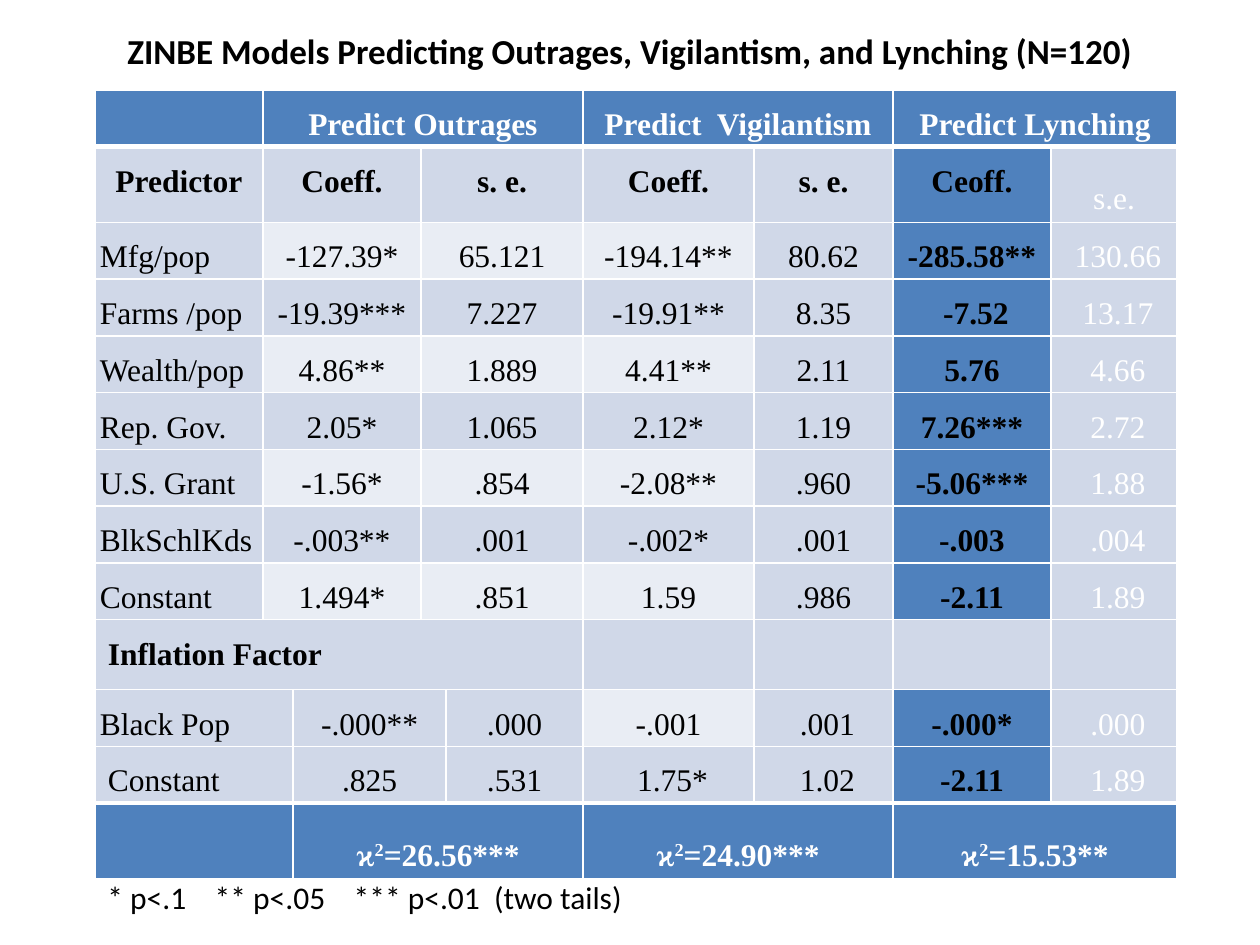
from pptx import Presentation
from pptx import util as u
from pptx.dml.color import RGBColor
from pptx.enum import text
from pptx.oxml import parse_xml
from pptx.oxml.ns import nsdecls

PX = 914400 // 126
BLUE = RGBColor(0x4F, 0x81, 0xBD)
BAND = RGBColor(0xD0, 0xD8, 0xE8)
PALE = RGBColor(0xE9, 0xED, 0xF4)
WHITE = RGBColor(255, 255, 255)
BLACK = RGBColor(0, 0, 0)


def add_run(paragraph, words, color, **format_values):
    run = paragraph.add_run()
    run.text = words
    run.font.color.rgb = color
    for name, value in format_values.items():
        setattr(run.font, name, value)
    return run


def set_borders(cell, top, bottom):
    properties = cell._tc.get_or_add_tcPr()
    for side, points in (("L", 1), ("R", 1), ("T", top), ("B", bottom)):
        properties.append(parse_xml(
            f'<a:ln{side} {nsdecls("a")} w="{u.Pt(points)}"><a:solidFill>'
            f'<a:srgbClr val="{WHITE}"/></a:solidFill></a:ln{side}>'))


presentation = Presentation()
presentation.slide_width = 1260 * PX
presentation.slide_height = 945 * PX
slide = presentation.slides.add_slide(presentation.slide_layouts[6])

captions = [
    ("ZINBE Models Predicting Outrages, Vigilantism, and Lynching (N=120)",
     (63, 22, 1134, 57), True, 20, True, text.PP_ALIGN.CENTER),
    ("* p<.1    ** p<.05    *** p<.01  (two tails)",
     (95, 872, 547, 50), False, 18, False, text.PP_ALIGN.LEFT),
]
for words, box, wrap, size, bold, alignment in captions:
    shape = slide.shapes.add_textbox(*(value * PX for value in box))
    frame = shape.text_frame
    frame.word_wrap = wrap
    frame.vertical_anchor = text.MSO_ANCHOR.MIDDLE
    paragraph = frame.paragraphs[0]
    paragraph.alignment = alignment
    add_run(paragraph, words, BLACK, name="Calibri", size=u.Pt(size), bold=bold)

HEADER = [(0, 1), (1, 4), (5, 2), (7, 2)]
BODY = [(0, 1), (1, 2), (3, 2), (5, 1), (6, 1), (7, 1), (8, 1)]
SECTION = [(0, 5), (5, 1), (6, 1), (7, 1), (8, 1)]
INFLATION = [(0, 2), (2, 2), (4, 1), (5, 1), (6, 1), (7, 1), (8, 1)]
FOOTER = [(0, 2), (2, 3), (5, 2), (7, 2)]

rows = [
    (51, HEADER, ["", "Predict Outrages", "Predict  Vigilantism", "Predict Lynching"]),
    (70, BODY, ["Predictor", "Coeff.", "s. e.", "Coeff.", "s. e.", "Ceoff.", "s.e."]),
    (56, BODY, ["Mfg/pop", "-127.39*", "65.121", "-194.14**", "80.62", "-285.58**", " 130.66"]),
    (56, BODY, ["Farms /pop", "-19.39***", "7.227", "-19.91**", "8.35", " -7.52", " 13.17"]),
    (56, BODY, ["Wealth/pop", "4.86**", "1.889", "4.41**", "2.11", "5.76", " 4.66"]),
    (56, BODY, ["Rep. Gov.", "2.05*", "1.065", "2.12*", "1.19", "7.26***", " 2.72"]),
    (56, BODY, ["U.S. Grant", "-1.56*", ".854", "-2.08**", ".960", "-5.06***", " 1.88"]),
    (56, BODY, ["BlkSchlKds", "-.003**", ".001", "-.002*", ".001", "-.003", " .004"]),
    (56, BODY, ["Constant", "1.494*", ".851", "1.59", ".986", "-2.11", " 1.89"]),
    (70, SECTION, [" Inflation Factor", "", "", "", ""]),
    (56, INFLATION, ["Black Pop", "-.000**", ".000", "-.001", " .001", "-.000*", " .000"]),
    (54, INFLATION, [" Constant", ".825", ".531", " 1.75*", " 1.02", "-2.11", " 1.89"]),
    (70, FOOTER, ["", "ϰ2=26.56***", "ϰ2=24.90***", "ϰ2=15.53**"]),
]
widths = [168, 29, 128, 25, 137, 171, 139, 158, 126]
last = len(rows) - 1

table = slide.shapes.add_table(
    len(rows), len(widths), 95 * PX, 90 * PX,
    sum(widths) * PX, sum(row[0] for row in rows) * PX).table
table.horz_banding = False
table.last_row = True
for column, width in zip(table.columns, widths):
    column.width = width * PX

for index, (height, layout, words_in_row) in enumerate(rows):
    table.rows[index].height = height * PX
    edge_row = layout in (HEADER, FOOTER)
    for column in range(len(widths)):
        set_borders(table.cell(index, column),
                    3 if index in (1, last) else 1,
                    3 if index in (0, last - 1) else 1)
    for (start, span), words in zip(layout, words_in_row):
        cell = table.cell(index, start)
        if span > 1:
            cell.merge(table.cell(index, start + span - 1))
        pale_columns = (5,) if layout is INFLATION else (1, 3, 5)
        fill = BAND
        if edge_row or (start == 7 and layout is not SECTION):
            fill = BLUE
        elif index % 2 == 0 and start in pale_columns:
            fill = PALE
        cell.fill.solid()
        cell.fill.fore_color.rgb = fill
        if not words:
            continue
        for name, value in {"margin_left": 5, "margin_right": 5,
                            "margin_top": 0, "margin_bottom": 0}.items():
            setattr(cell, name, value * PX)
        paragraph = cell.text_frame.paragraphs[0]
        left_aligned = start == 0 and index > 1
        paragraph.alignment = text.PP_ALIGN.LEFT if left_aligned else text.PP_ALIGN.CENTER
        paragraph.line_spacing = 2.0 if index == last or words == "s.e." else 1.5
        color = WHITE if edge_row or start == 8 else BLACK
        bold = start != 8 and (index < 2 or edge_row or layout is SECTION or start == 7)
        parts = [words[0], words[1], words[2:]] if layout is FOOTER else [words]
        for position, part in enumerate(parts):
            run = add_run(paragraph, part, color, name="Times New Roman",
                          size=u.Pt(18), bold=bold)
            if position == 1:
                run._r.get_or_add_rPr().set("baseline", "30000")

presentation.save("out.pptx")
